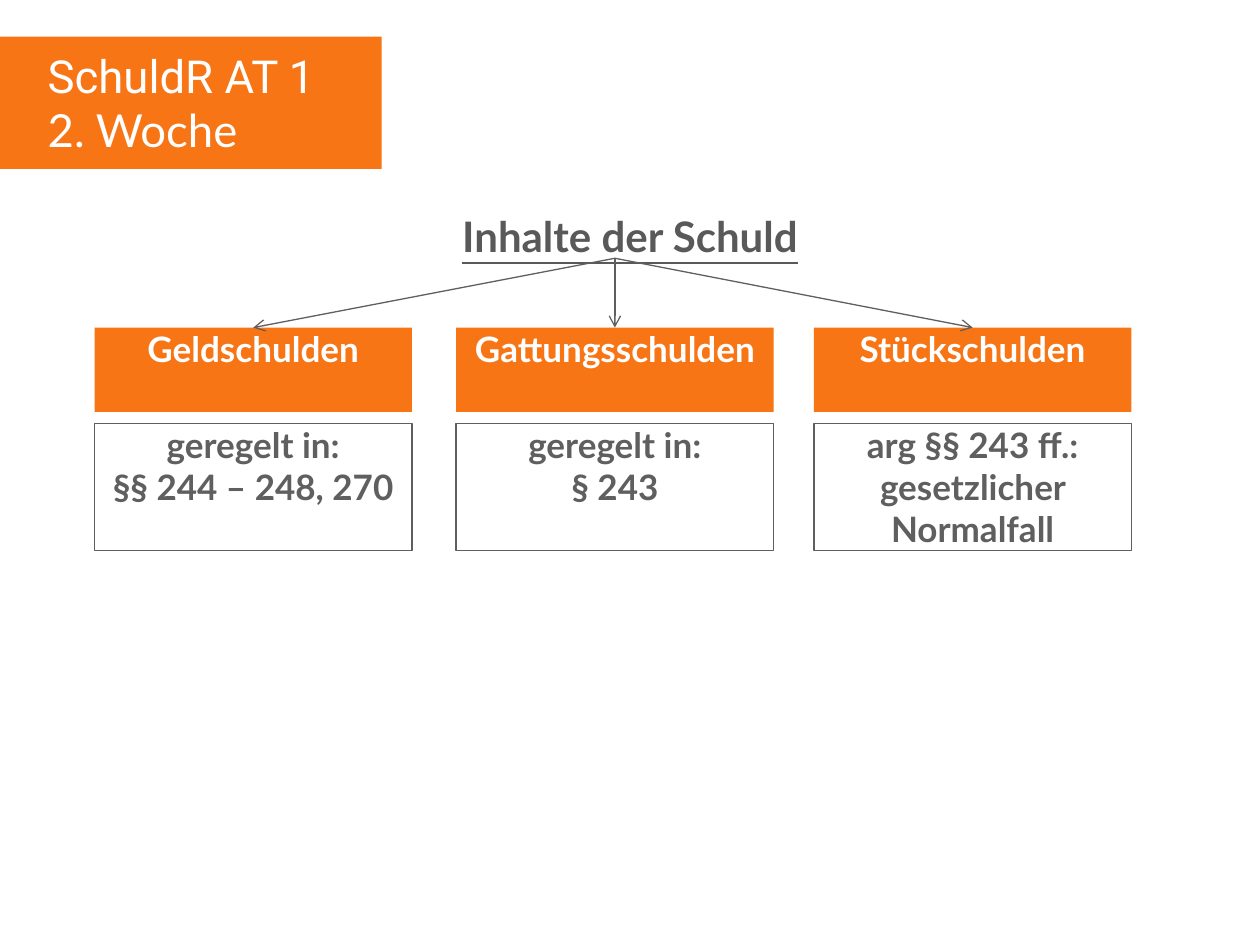
import pptx
import pptx.util
import pptx.dml.color
import pptx.enum.shapes
import pptx.enum.text
import pptx.oxml.ns
from lxml import etree

Inches = pptx.util.Inches
COLORS = {"orange": "F77515", "white": "FFFFFF", "gray": "5F5F5F", "heading": "595959"}


def color(name):
    return pptx.dml.color.RGBColor.from_string(COLORS[name])


def add_text(shape, lines, size, color_name, bold=False, centered=True, fonts=("Lato", "Lato")):
    frame = shape.text_frame
    frame.word_wrap = True
    frame.vertical_anchor = pptx.enum.text.MSO_ANCHOR.TOP
    alignment = pptx.enum.text.PP_ALIGN
    for index, line in enumerate(lines):
        paragraph = frame.add_paragraph() if index else frame.paragraphs[0]
        paragraph.alignment = alignment.CENTER if centered else alignment.LEFT
        run = paragraph.add_run()
        run.text = line
        run.font.name = fonts[index]
        run.font.size = pptx.util.Pt(size)
        run.font.bold = bold
        run.font.color.rgb = color(color_name)


def add_box(left, top, width, height, fill, line=None):
    shape = slide.shapes.add_shape(
        pptx.enum.shapes.MSO_SHAPE.RECTANGLE,
        Inches(left), Inches(top), Inches(width), Inches(height))
    shape.shadow.inherit = False
    shape.fill.solid()
    shape.fill.fore_color.rgb = color(fill)
    if line:
        shape.line.color.rgb = color(line)
        shape.line.width = pptx.util.Pt(0.75)
    else:
        shape.line.fill.background()
    frame = shape.text_frame
    frame.margin_left = frame.margin_top = frame.margin_right = frame.margin_bottom = 0
    return shape


presentation = pptx.Presentation()
presentation.slide_width = Inches(10)
presentation.slide_height = Inches(7.5)
slide = presentation.slides.add_slide(presentation.slide_layouts[6])

add_box(0, 0.29, 3.03, 1.05, "orange")

heading = slide.shapes.add_textbox(Inches(0.12), Inches(1.62), Inches(9.76), Inches(0.98))
add_text(heading, ["Inhalte der Schuld"], 24, "heading", bold=True)
heading.text_frame.paragraphs[0].runs[0].font.underline = True

course = slide.shapes.add_textbox(Inches(0.28), Inches(0.33), Inches(2.6), Inches(0.98))
add_text(course, ["SchuldR AT 1", "2. Woche"], 26, "white", centered=False, fonts=("Roboto", "Lato"))

debt_types = [
    (0.75, "Geldschulden", ["geregelt in:", "§§ 244 – 248, 270"]),
    (3.62, "Gattungsschulden", ["geregelt in:", "§ 243"]),
    (6.46, "Stückschulden", ["arg §§ 243 ff.: gesetzlicher Normalfall"]),
]

for left, name, rule in debt_types:
    name_box = add_box(left, 2.6, 2.52, 0.67, "orange")
    add_text(name_box, [name], 20, "white", bold=True)

    rule_box = add_box(left, 3.36, 2.52, 1.01, "white", "gray")
    add_text(rule_box, rule, 20, "gray", bold=True)

    arrow = slide.shapes.add_connector(
        pptx.enum.shapes.MSO_CONNECTOR.STRAIGHT,
        Inches(4.88), Inches(2.05), Inches(left + 1.26), Inches(2.6))
    arrow.end_connect(name_box, 0)
    arrow.line.color.rgb = color("gray")
    arrow.line.width = pptx.util.Pt(0.75)
    tail = etree.SubElement(arrow.line._get_or_add_ln(), pptx.oxml.ns.qn("a:tailEnd"))
    tail.set("type", "arrow")
    etree.SubElement(arrow._element.spPr, pptx.oxml.ns.qn("a:effectLst"))

presentation.save("out.pptx")
